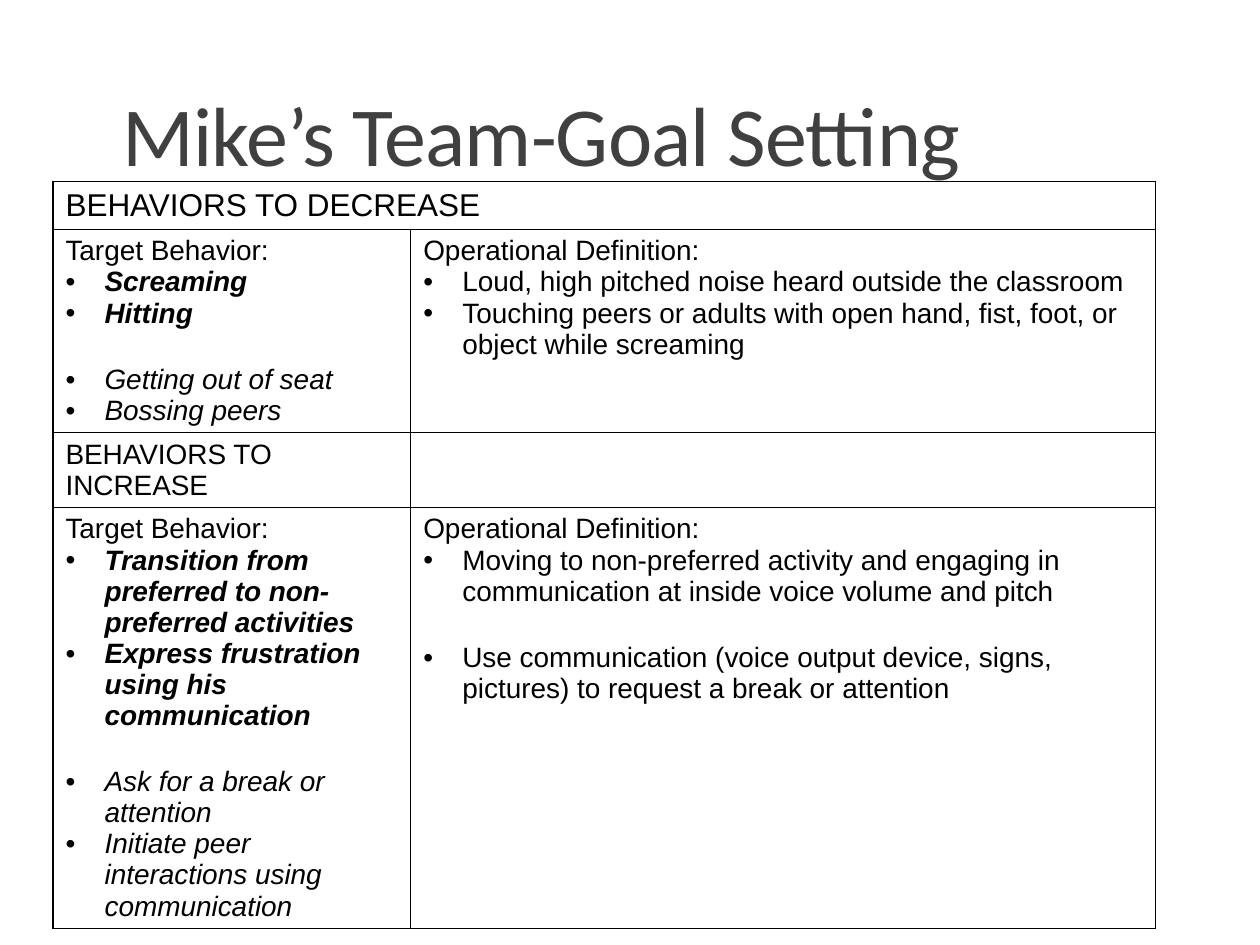
from dataclasses import dataclass

from lxml.etree import SubElement
from pptx import Presentation
from pptx.dml.color import RGBColor
from pptx.enum.text import MSO_ANCHOR, MSO_AUTO_SIZE, PP_ALIGN
from pptx.oxml.ns import qn
from pptx.util import Emu, Inches, Pt

COLORS = {"title": "404040", "text": "000000", "border": "000000"}
COL_WIDTHS = (2.84, 5.91)
ROW_HEIGHTS = (0.36, 1.52, 0.57, 3.2)
TABLE_LEFT, TABLE_TOP = 0.42, 1.44
BULLET_INDENT = Inches(0.31)
GROUP_GAP = 20


@dataclass(frozen=True)
class Item:
    text: str
    bold: bool = False
    italic: bool = False
    bullet: bool = True
    size: int = 16
    before: int = 0


def heading(text: str, size: int = 16) -> Item:
    return Item(text, bullet=False, size=size)


def priority(text: str) -> Item:
    return Item(text, bold=True, italic=True)


def secondary(text: str, before: int = 0) -> Item:
    return Item(text, italic=True, before=before)


CELLS = {
    (0, 0): [heading("BEHAVIORS TO DECREASE", size=18)],
    (1, 0): [
        heading("Target Behavior:"),
        priority("Screaming"),
        priority("Hitting"),
        secondary("Getting out of seat", GROUP_GAP),
        secondary("Bossing peers"),
    ],
    (1, 1): [
        heading("Operational Definition:"),
        Item("Loud, high pitched noise heard outside the classroom"),
        Item("Touching peers or adults with open hand, fist, foot, or object while screaming"),
    ],
    (2, 0): [heading("BEHAVIORS TO INCREASE")],
    (3, 0): [
        heading("Target Behavior:"),
        priority("Transition from preferred to non-preferred activities"),
        priority("Express frustration using his communication"),
        secondary("Ask for a break or attention", GROUP_GAP),
        secondary("Initiate peer interactions using communication"),
    ],
    (3, 1): [
        heading("Operational Definition:"),
        Item("Moving to non-preferred activity and engaging in communication "
             "at inside voice volume and pitch"),
        Item("Use communication (voice output device, signs, pictures) "
             "to request a break or attention", before=GROUP_GAP),
    ],
}


def add_text(p, text: str, *, size: int, font: str = "Arial", color: str = "text",
             bold: bool = False, italic: bool = False):
    r = p.add_run()
    r.text = text
    f = r.font
    f.name, f.size, f.bold, f.italic = font, Pt(size), bold, italic
    f.color.rgb = RGBColor.from_string(COLORS[color])
    return r


def add_bullet(p) -> None:
    pPr = p._p.get_or_add_pPr()
    pPr.set("marL", str(BULLET_INDENT))
    pPr.set("indent", str(-BULLET_INDENT))
    SubElement(pPr, qn("a:buFont"), typeface="Arial")
    SubElement(pPr, qn("a:buChar"), char="•")


def fill_cell(cell, items: list[Item]) -> None:
    tf = cell.text_frame
    for i, item in enumerate(items):
        p = tf.add_paragraph() if i else tf.paragraphs[0]
        if item.bullet:
            add_bullet(p)
        if item.before:
            p.space_before = Pt(item.before)
        add_text(p, item.text, size=item.size, bold=item.bold, italic=item.italic)


def outline_cell(cell) -> None:
    tcPr = cell._tc.get_or_add_tcPr()
    for side in ("lnL", "lnR", "lnT", "lnB"):
        ln = SubElement(tcPr, qn(f"a:{side}"), w=str(Pt(1)))
        solid = SubElement(ln, qn("a:solidFill"))
        SubElement(solid, qn("a:srgbClr"), val=COLORS["border"])
    cell.fill.background()


def add_title(slide, text: str) -> None:
    s = slide.shapes.title
    s.left, s.top, s.width, s.height = map(Inches, (0.17, -0.08, 8.25, 1.59))
    tf = s.text_frame
    tf.word_wrap, tf.auto_size = True, MSO_AUTO_SIZE.NONE
    tf.vertical_anchor = MSO_ANCHOR.BOTTOM
    p = tf.paragraphs[0]
    p.alignment, p.line_spacing = PP_ALIGN.CENTER, 0.85
    r = add_text(p, text, size=48, font="Calibri", color="title")
    r._r.get_or_add_rPr().set("spc", "-50")


def add_goal_table(slide) -> None:
    widths = [Inches(w) for w in COL_WIDTHS]
    heights = [Inches(h) for h in ROW_HEIGHTS]
    table = slide.shapes.add_table(
        len(heights), len(widths), Inches(TABLE_LEFT), Inches(TABLE_TOP),
        Emu(sum(widths)), Emu(sum(heights))).table
    table.first_row = table.horz_banding = False
    for col, width in zip(table.columns, widths):
        col.width = width
    for row, height in zip(table.rows, heights):
        row.height = height
    table.cell(0, 0).merge(table.cell(0, 1))
    for cell in table.iter_cells():
        outline_cell(cell)
    for (row, col), items in CELLS.items():
        fill_cell(table.cell(row, col), items)


def main() -> None:
    prs = Presentation()
    prs.slide_width, prs.slide_height = Inches(10), Inches(7.5)
    slide = prs.slides.add_slide(prs.slide_layouts[5])
    add_title(slide, "Mike’s Team-Goal Setting")
    add_goal_table(slide)
    prs.save("out.pptx")


if __name__ == "__main__":
    main()
